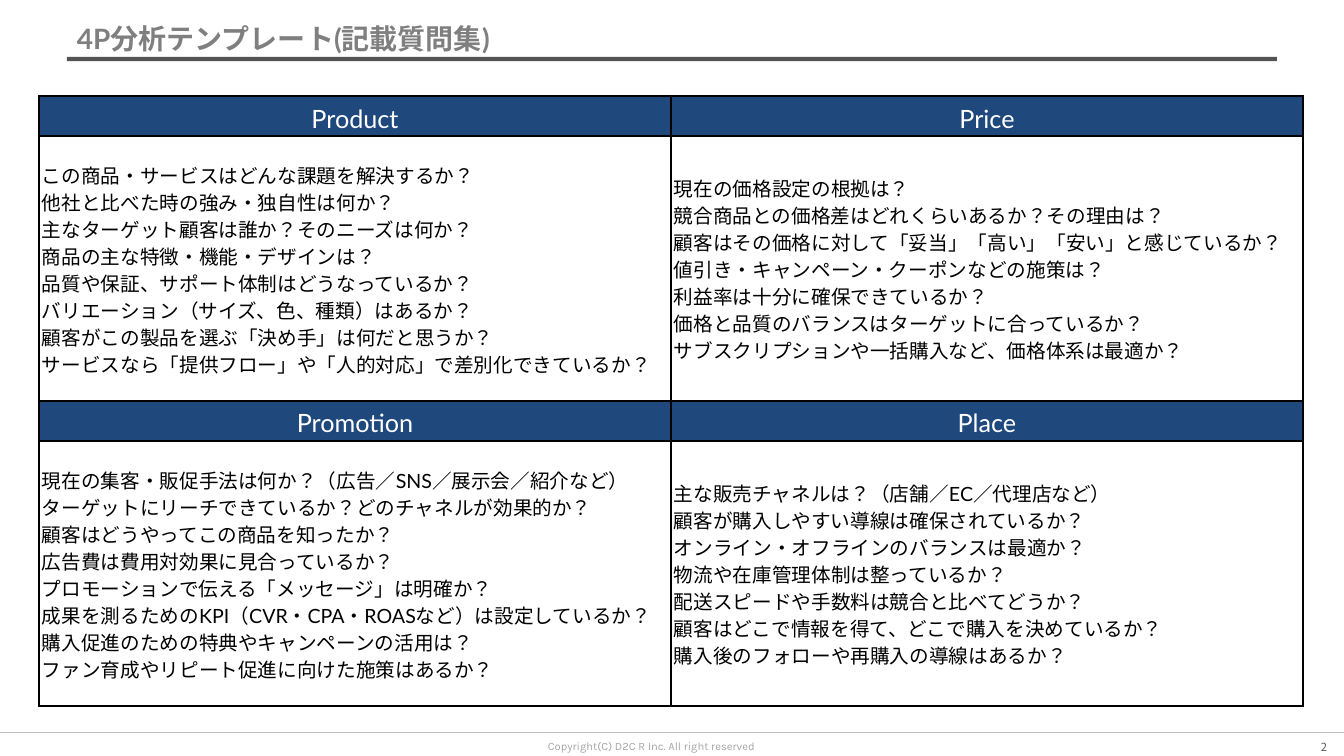
"""Build the 4P analysis question slide."""
import lxml.etree
import pptx
import pptx.dml.color
import pptx.enum.lang
import pptx.enum.shapes
import pptx.enum.text
import pptx.oxml.ns
import pptx.util

SCALE = 914400 / 100.8
SIZE = (1344, 756)
ALIGN = pptx.enum.text.PP_ALIGN
ANCHOR = pptx.enum.text.MSO_ANCHOR

QUADRANTS = [
    [
        ("Product", [
            "この商品・サービスはどんな課題を解決するか？",
            "他社と比べた時の強み・独自性は何か？",
            "主なターゲット顧客は誰か？そのニーズは何か？",
            "商品の主な特徴・機能・デザインは？",
            "品質や保証、サポート体制はどうなっているか？",
            "バリエーション（サイズ、色、種類）はあるか？",
            "顧客がこの製品を選ぶ「決め手」は何だと思うか？",
            "サービスなら「提供フロー」や「人的対応」で差別化できているか？",
        ]),
        ("Price", [
            "現在の価格設定の根拠は？",
            "競合商品との価格差はどれくらいあるか？その理由は？",
            "顧客はその価格に対して「妥当」「高い」「安い」と感じているか？",
            "値引き・キャンペーン・クーポンなどの施策は？",
            "利益率は十分に確保できているか？",
            "価格と品質のバランスはターゲットに合っているか？",
            "サブスクリプションや一括購入など、価格体系は最適か？",
        ]),
    ],
    [
        ("Promotion", [
            "現在の集客・販促手法は何か？（広告／SNS／展示会／紹介など）",
            "ターゲットにリーチできているか？どのチャネルが効果的か？",
            "顧客はどうやってこの商品を知ったか？",
            "広告費は費用対効果に見合っているか？",
            "プロモーションで伝える「メッセージ」は明確か？",
            "成果を測るためのKPI（CVR・CPA・ROASなど）は設定しているか？",
            "購入促進のための特典やキャンペーンの活用は？",
            "ファン育成やリピート促進に向けた施策はあるか？",
        ]),
        ("Place", [
            "主な販売チャネルは？（店舗／EC／代理店など）",
            "顧客が購入しやすい導線は確保されているか？",
            "オンライン・オフラインのバランスは最適か？",
            "物流や在庫管理体制は整っているか？",
            "配送スピードや手数料は競合と比べてどうか？",
            "顧客はどこで情報を得て、どこで購入を決めているか？",
            "購入後のフォローや再購入の導線はあるか？",
        ]),
    ],
]
TABLE_LEFT, TABLE_TOP, COLUMN_WIDTH = 39, 96, 632
HEADER_HEIGHT, BODY_HEIGHT = 40, 265
HEADER = {"size": 18, "name": "Lato", "color": "FFFFFF"}
BODY = {"size": 14, "name": "Lato", "color": "000000"}

TEXTS = [
    ("2", (1258, 735, 79, 29), ALIGN.RIGHT, ANCHOR.TOP,
     {"size": 8, "name": "Noto Sans CJK JP", "color": "595959"}),
    ("Copyright(C) D2C R Inc. All right reserved", (538, 734, 255, 24), ALIGN.LEFT, ANCHOR.TOP,
     {"size": 8, "name": "Karla", "color": "A5A5A5"}),
    ("4P分析テンプレート(記載質問集)", (67, 11, 1210, 54), ALIGN.LEFT, ANCHOR.MIDDLE,
     {"size": 20, "name": "Lato", "color": "7F7F7F", "bold": True}),
]
RULES = [(67, 1277, 59, "0C0C0C", 3, 69), (0, 1344, 733, "BFBFBF", 0.75, 100)]


def px(length):
    return pptx.util.Emu(round(length * SCALE))


def rgb(value):
    return pptx.dml.color.RGBColor.from_string(value)


def add_element(parent, tag, **attributes):
    return lxml.etree.SubElement(parent, pptx.oxml.ns.qn(tag), attributes)


def write(frame, lines, alignment, style, spacing=None):
    for index, line in enumerate(lines):
        paragraph = frame.add_paragraph() if index else frame.paragraphs[0]
        paragraph.alignment = alignment
        paragraph.line_spacing = spacing
        run = paragraph.add_run()
        run.text = line
        values = {**style, "size": pptx.util.Pt(style["size"]),
                  "language_id": pptx.enum.lang.MSO_LANGUAGE_ID.JAPANESE}
        run.font.color.rgb = rgb(values.pop("color"))
        for name, value in values.items():
            setattr(run.font, name, value)
        add_element(run.font._element, "a:ea", typeface=style["name"])


def add_rule(slide, left, right, top, color, width, opacity):
    rule = slide.shapes.add_connector(
        pptx.enum.shapes.MSO_CONNECTOR.STRAIGHT, px(left), px(top), px(right), px(top))
    rule.line.color.rgb = rgb(color)
    rule.line.width = pptx.util.Pt(width)
    if opacity < 100:
        fill_color = rule.line._ln.find(".//" + pptx.oxml.ns.qn("a:srgbClr"))
        add_element(fill_color, "a:alpha", val=str(opacity * 1000))
    add_element(rule._element.spPr, "a:effectLst")


def add_text(slide, text, box, alignment, anchor, style):
    frame = slide.shapes.add_textbox(*map(px, box)).text_frame
    frame.word_wrap = True
    frame.vertical_anchor = anchor
    write(frame, [text], alignment, style)


def fill_cell(cell, lines, alignment, style, color):
    cell.vertical_anchor = ANCHOR.MIDDLE
    cell.margin_left = cell.margin_right = px(3)
    cell.margin_top = cell.margin_bottom = px(2)
    properties = cell._tc.get_or_add_tcPr()
    for side in "LRTB":
        border = add_element(properties, "a:ln" + side, w=str(pptx.util.Pt(2.25)))
        add_element(add_element(border, "a:solidFill"), "a:srgbClr", val="000000")
    cell.fill.solid()
    cell.fill.fore_color.rgb = rgb(color)
    write(cell.text_frame, lines, alignment, style, 1.15)


def add_questions(slide):
    heights = [HEADER_HEIGHT, BODY_HEIGHT] * len(QUADRANTS)
    columns = len(QUADRANTS[0])
    table = slide.shapes.add_table(
        len(heights), columns, px(TABLE_LEFT), px(TABLE_TOP),
        px(COLUMN_WIDTH * columns), px(sum(heights))).table
    for row, height in zip(table.rows, heights):
        row.height = px(height)
    for column in table.columns:
        column.width = px(COLUMN_WIDTH)
    for band, quadrants in enumerate(QUADRANTS):
        for column, (heading, questions) in enumerate(quadrants):
            fill_cell(table.cell(2 * band, column), [heading], ALIGN.CENTER, HEADER, "1F497D")
            fill_cell(table.cell(2 * band + 1, column), questions, ALIGN.LEFT, BODY, "FFFFFF")


def main():
    presentation = pptx.Presentation()
    presentation.slide_width, presentation.slide_height = map(px, SIZE)
    slide = presentation.slides.add_slide(presentation.slide_layouts[6])
    for rule in RULES:
        add_rule(slide, *rule)
    for text in TEXTS:
        add_text(slide, *text)
    add_questions(slide)
    presentation.save("out.pptx")


if __name__ == "__main__":
    main()
